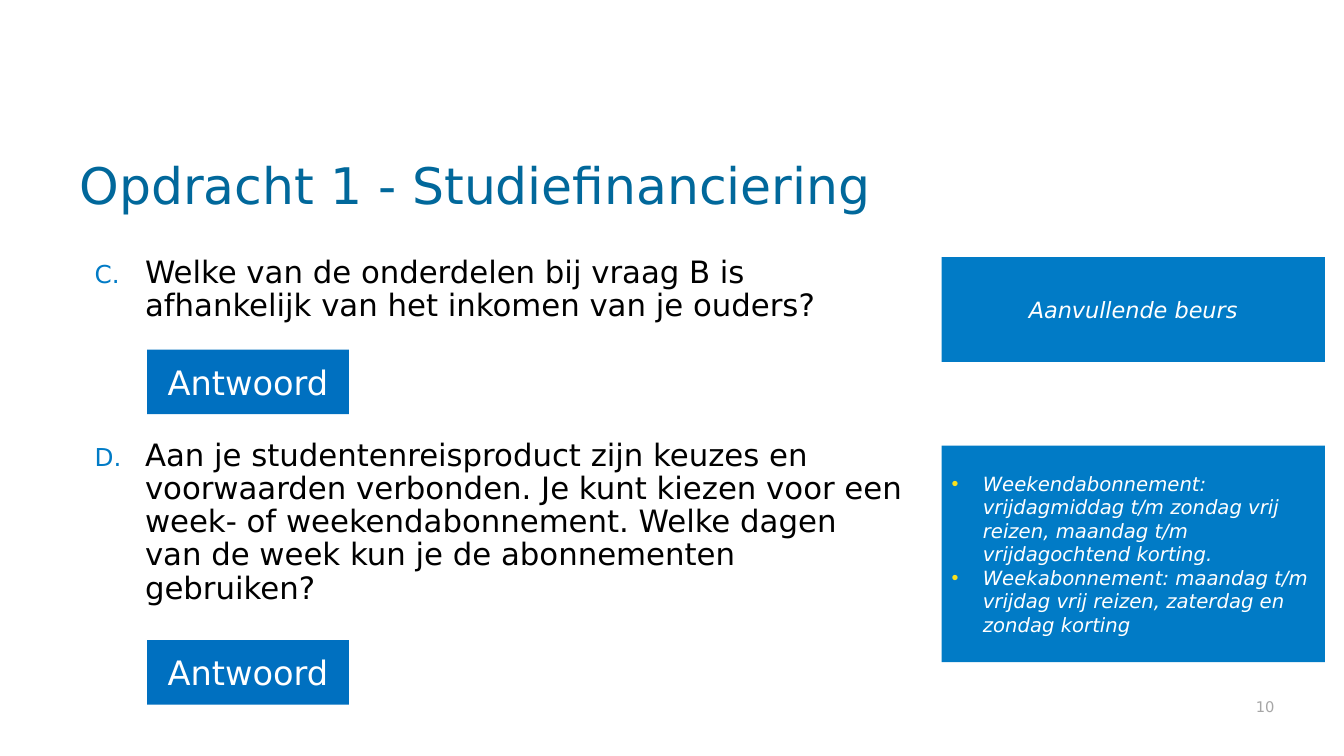
from lxml import etree
from pptx import Presentation
from pptx import util as u
from pptx.dml.color import RGBColor
from pptx.enum import shapes, text
from pptx.oxml.ns import qn

FONT = "DejaVu Sans"
COLOURS = {
    "title": "01689B", "body": "000000", "button": "0070C0", "panel": "017BC6",
    "white": "FFFFFF", "bullet": "F9E11E", "number": "A6A6A6",
}
LEFT, BUTTON_LEFT, PANEL_LEFT = 0.69, 1.46, 9.34
BUTTON_SIZE, PANEL_WIDTH = (2, 0.64), 3.8
LEFT_ALIGN, CENTRE, RIGHT_ALIGN = text.PP_ALIGN.LEFT, text.PP_ALIGN.CENTER, text.PP_ALIGN.RIGHT
TOP, MIDDLE, BOTTOM = text.MSO_ANCHOR.TOP, text.MSO_ANCHOR.MIDDLE, text.MSO_ANCHOR.BOTTOM


def write(box, lines, size, colour, anchor, align=LEFT_ALIGN, italic=False,
          spacing=None, gap=0, indent=0, hanging=0, marks=()):
    """Fill a shape with paragraphs; marks are (tag, attributes) of the bullet."""
    frame = box.text_frame
    frame.word_wrap = True
    frame.auto_size = text.MSO_AUTO_SIZE.NONE
    frame.vertical_anchor = anchor
    for index, line in enumerate(lines):
        para = frame.paragraphs[0] if index == 0 else frame.add_paragraph()
        para.alignment = align
        if spacing:
            para.line_spacing = spacing
        para.space_before = u.Pt(gap if index else 0)
        if marks:
            properties = para._p.get_or_add_pPr()
            properties.set("marL", str(u.Inches(indent)))
            properties.set("indent", str(-u.Inches(hanging)))
            for tag, attributes in marks:
                element = etree.SubElement(properties, qn(tag), attributes)
                if tag == "a:buClr":
                    etree.SubElement(element, qn("a:srgbClr"), val=attributes_colour(marks))
        span = para.add_run()
        span.text = line
        for name, value in {"name": FONT, "size": u.Pt(size), "italic": italic}.items():
            setattr(span.font, name, value)
        span.font.color.rgb = RGBColor.from_string(COLOURS[colour])


def attributes_colour(marks):
    """Bullet colour: blue for numbered questions, yellow for dots."""
    numbered = any(tag == "a:buAutoNum" for tag, _ in marks)
    return COLOURS["panel" if numbered else "bullet"]


deck = Presentation()
deck.slide_width, deck.slide_height = u.Inches(13.33), u.Inches(7.5)
page = deck.slides.add_slide(deck.slide_layouts[5])

# Title
title = page.shapes.title
title.left, title.top, title.width, title.height = map(u.Inches, (LEFT, 1.15, 11.95, 1.04))
write(title, ["Opdracht 1 - Studiefinanciering"], 36, "title", BOTTOM, spacing=0.9)

# Questions, lettered from C
questions = page.shapes.add_textbox(*map(u.Inches, (LEFT, 2.5, 8.36, 4.3)))
write(questions, [
    "Welke van de onderdelen bij vraag B is afhankelijk van het inkomen van je ouders?",
    "Aan je studentenreisproduct zijn keuzes en voorwaarden verbonden. Je kunt kiezen voor "
    "een week- of weekendabonnement. Welke dagen van de week kun je de abonnementen gebruiken?",
], 22, "body", TOP, spacing=0.9, gap=83, indent=0.65, hanging=0.5, marks=[
    ("a:buClr", {}), ("a:buSzPct", {"val": "80000"}), ("a:buFont", {"typeface": FONT}),
    ("a:buAutoNum", {"type": "alphaUcPeriod", "startAt": "3"}),
])

# Page number
number = page.shapes.add_textbox(*map(u.Inches, (7.17, 6.8, 5.47, 0.35)))
number.text_frame.margin_right = 0
write(number, ["10"], 10.5, "number", BOTTOM, RIGHT_ALIGN)

# Answer buttons and answer panels
button = {"size": 24, "align": CENTRE}
dots = {"size": 14, "italic": True, "indent": 0.31, "hanging": 0.31, "marks": [
    ("a:buClr", {}), ("a:buFont", {"typeface": "Arial"}), ("a:buChar", {"char": "•"})]}
blocks = [
    ((BUTTON_LEFT, 3.47, *BUTTON_SIZE), "button", ["Antwoord"], button),
    ((BUTTON_LEFT, 6.35, *BUTTON_SIZE), "button", ["Antwoord"], button),
    ((PANEL_LEFT, 4.42, PANEL_WIDTH, 2.15), "panel", [
        "Weekendabonnement: vrijdagmiddag t/m zondag vrij reizen, "
        "maandag t/m vrijdagochtend korting.",
        "Weekabonnement: maandag t/m vrijdag vrij reizen, zaterdag en zondag korting",
    ], dots),
    ((PANEL_LEFT, 2.55, PANEL_WIDTH, 1.04), "panel", ["Aanvullende beurs"],
     {"size": 16, "align": CENTRE, "italic": True}),
]
for place, fill, lines, style in blocks:
    block = page.shapes.add_shape(shapes.MSO_SHAPE.RECTANGLE, *map(u.Inches, place))
    block.shadow.inherit = False
    block.fill.solid()
    block.fill.fore_color.rgb = RGBColor.from_string(COLOURS[fill])
    block.line.fill.background()
    write(block, lines, colour="white", anchor=MIDDLE, **style)

deck.save("out.pptx")
